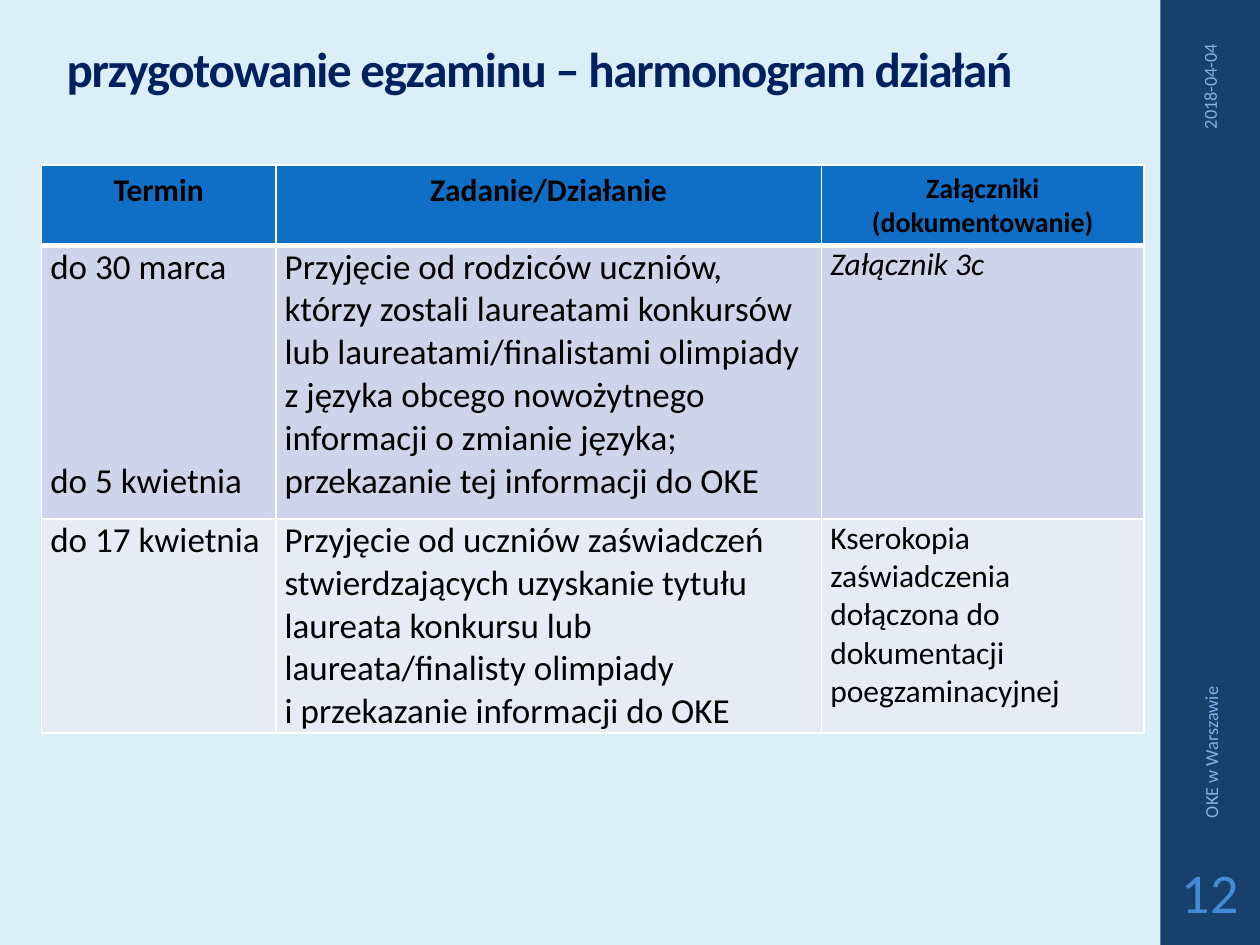
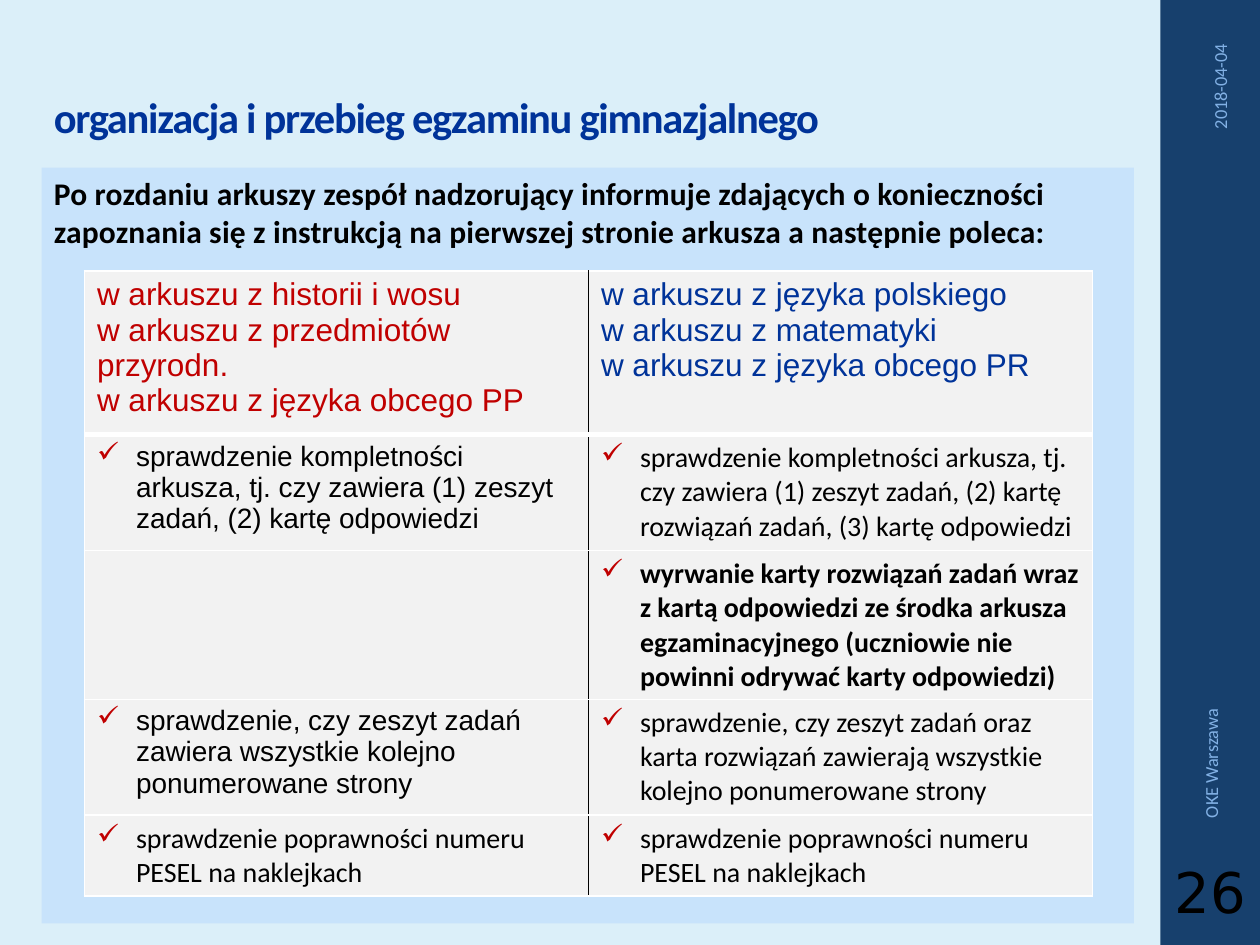
from dataclasses import dataclass, replace

from lxml import etree
from pptx import Presentation
from pptx.dml.color import RGBColor
from pptx.enum.shapes import MSO_SHAPE
from pptx.enum.text import MSO_ANCHOR, PP_ALIGN
from pptx.oxml.ns import qn
from pptx.util import Emu, Pt

RECT = MSO_SHAPE.RECTANGLE
TOP, MIDDLE, BOTTOM = MSO_ANCHOR.TOP, MSO_ANCHOR.MIDDLE, MSO_ANCHOR.BOTTOM
LEFT, CENTER, RIGHT = PP_ALIGN.LEFT, PP_ALIGN.CENTER, PP_ALIGN.RIGHT

EMU_PER_PX = 9144  # 100 px to the inch
SLIDE_W, SLIDE_H = 1000, 750
BAND_X = 921

BACKGROUND, BAND = "DBEFF9", "17406D"
FOOTER, PAGE_BLUE = "82B1E5", "448AD7"
NAVY, BLUE, RED = "002060", "003399", "C00000"
BLACK, WHITE = "000000", "FFFFFF"
HEADER_FILL, ROW_DARK, ROW_LIGHT = "0F6FC6", "CCD5EA", "E7EBF5"
PANEL, GREY = "C8E3FB", "F2F2F2"


@dataclass(frozen=True)
class Box:
    x: int
    y: int
    w: int
    h: int


@dataclass(frozen=True)
class Style:
    size: float
    color: str = BLACK
    font: str = "Calibri"
    bold: bool = False
    italic: bool = False
    tracking: int = 0  # hundredths of a point
    align: int = LEFT
    line_spacing: float = 1.0


@dataclass(frozen=True)
class Cell:
    text: str
    style: Style
    fill: str
    bullet: bool = False
    gap: int = 0  # points before each later paragraph
    margin_x: int = 10
    margin_y: int = 5


@dataclass(frozen=True)
class Footer:
    date_x: int
    office: str
    page: str
    page_style: Style


TITLE = Style(28, NAVY, bold=True, tracking=-70, line_spacing=0.9)
SMALL = Style(10.5, FOOTER)
PAGE = Style(32, PAGE_BLUE, align=CENTER)


def px(n: int) -> Emu:
    return Emu(n * EMU_PER_PX)


def rgb(color: str) -> RGBColor:
    return RGBColor.from_string(color)


def place(box: Box) -> tuple[Emu, ...]:
    return px(box.x), px(box.y), px(box.w), px(box.h)


def write(tf, text: str, style: Style, gap: int = 0) -> None:
    """Fill a text frame with one paragraph per line of text."""
    tf.word_wrap = True
    tf.text = text
    for i, p in enumerate(tf.paragraphs):
        p.alignment = style.align
        p.line_spacing = style.line_spacing
        if gap and i:
            p.space_before = Pt(gap)
        for r in p.runs:
            r.font.size = Pt(style.size)
            r.font.name = style.font
            r.font.bold = style.bold
            r.font.italic = style.italic
            r.font.color.rgb = rgb(style.color)
            if style.tracking:
                r._r.get_or_add_rPr().set("spc", str(style.tracking))


def add_text(slide, box: Box, text: str, style: Style, anchor=MIDDLE,
             rotation: int = 0, margin_x: int = 10) -> None:
    sp = slide.shapes.add_textbox(*place(box))
    sp.rotation = rotation
    tf = sp.text_frame
    tf.margin_left = tf.margin_right = px(margin_x)
    tf.vertical_anchor = anchor
    write(tf, text, style)


def add_rect(slide, box: Box, fill: str):
    sp = slide.shapes.add_shape(RECT, *place(box))
    sp.shadow.inherit = False
    sp.fill.solid()
    sp.fill.fore_color.rgb = rgb(fill)
    sp.line.fill.background()
    return sp


def add_check(p) -> None:
    """Give a paragraph a red tick and a hanging indent."""
    pPr = p._p.get_or_add_pPr()
    pPr.set("marL", str(px(31)))
    pPr.set("indent", str(px(-31)))
    color = etree.SubElement(pPr, qn("a:buClr"))
    etree.SubElement(color, qn("a:srgbClr"), val=RED)
    etree.SubElement(pPr, qn("a:buChar"), char="✓")


def add_border(cell, side: str, color: str, width: int) -> None:
    ln = etree.SubElement(cell._tc.get_or_add_tcPr(), qn(f"a:ln{side}"),
                          w=str(Pt(width)))
    fill = etree.SubElement(ln, qn("a:solidFill"))
    etree.SubElement(fill, qn("a:srgbClr"), val=color)


def add_table(slide, x: int, y: int, widths: list[int], heights: list[int],
              rows: list[list[Cell]], divider: str) -> None:
    """Draw a table with white rules, a thick one under the header, and
    inner vertical rules in the divider colour."""
    box = Box(x, y, sum(widths), sum(heights))
    table = slide.shapes.add_table(len(rows), len(widths), *place(box)).table
    table.first_row = table.horz_banding = False
    for column, width in zip(table.columns, widths):
        column.width = px(width)
    for i, (row, height) in enumerate(zip(rows, heights)):
        table.rows[i].height = px(height)
        for j, item in enumerate(row):
            cell = table.cell(i, j)
            cell.margin_left = cell.margin_right = px(item.margin_x)
            cell.margin_top = cell.margin_bottom = px(item.margin_y)
            cell.vertical_anchor = TOP
            write(cell.text_frame, item.text, item.style, item.gap)
            if item.bullet:
                add_check(cell.text_frame.paragraphs[0])
            add_border(cell, "L", divider if j else WHITE, 1)
            add_border(cell, "R", divider if j < len(row) - 1 else WHITE, 1)
            add_border(cell, "T", WHITE, 3 if i == 1 else 1)
            add_border(cell, "B", WHITE, 3 if i == 0 else 1)
            cell.fill.solid()
            cell.fill.fore_color.rgb = rgb(item.fill)


def add_slide(prs, title: str, title_box: Box, title_style: Style,
              footer: Footer):
    """Add a slide with its background, side band, title and footers."""
    slide = prs.slides.add_slide(prs.slide_layouts[6])
    slide.background.fill.solid()
    slide.background.fill.fore_color.rgb = rgb(BACKGROUND)
    add_rect(slide, Box(BAND_X, 0, SLIDE_W - BAND_X, SLIDE_H), BAND)
    add_text(slide, title_box, title, title_style, BOTTOM)
    add_text(slide, Box(footer.date_x, 114, 208, 30), "2018-04-04",
             replace(SMALL, align=RIGHT), rotation=270)
    add_text(slide, Box(765, 448, 392, 30), footer.office, SMALL,
             rotation=270)
    add_text(slide, Box(923, 675, 75, 65), footer.page, footer.page_style,
             margin_x=3)
    return slide


def build_schedule(prs) -> None:
    slide = add_slide(prs, "przygotowanie egzaminu – harmonogram działań",
                      Box(43, 25, 807, 58), TITLE,
                      Footer(856, "OKE w Warszawie", "12", PAGE))
    head = Style(18, bold=True, align=CENTER)
    body, note = Style(20), Style(18)

    def entry(text: str, style: Style, fill: str, gap: int = 0) -> Cell:
        return Cell(text, style, fill, gap=gap, margin_x=7, margin_y=0)

    rows = [
        [Cell("Termin", head, HEADER_FILL),
         Cell("Zadanie/Działanie", head, HEADER_FILL),
         Cell("Załączniki\n(dokumentowanie)", replace(head, size=16),
              HEADER_FILL)],
        [entry("do 30 marca\ndo 5 kwietnia", body, ROW_DARK, gap=98),
         entry("Przyjęcie od rodziców uczniów, którzy zostali laureatami "
               "konkursów lub laureatami/finalistami olimpiady z języka "
               "obcego nowożytnego informacji o zmianie języka;\n"
               "przekazanie tej informacji do OKE", body, ROW_DARK),
         entry("Załącznik 3c", replace(note, italic=True), ROW_DARK)],
        [entry("do 17 kwietnia", body, ROW_LIGHT),
         entry("Przyjęcie od uczniów zaświadczeń stwierdzających uzyskanie "
               "tytułu laureata konkursu lub laureata/finalisty olimpiady\n"
               "i przekazanie informacji do OKE", body, ROW_LIGHT),
         entry("Kserokopia zaświadczenia dołączona do dokumentacji "
               "poegzaminacyjnej", note, ROW_LIGHT)],
    ]
    add_table(slide, 33, 131, [186, 433, 256], [64, 217, 170], rows, WHITE)


def build_instructions(prs) -> None:
    slide = add_slide(prs, "organizacja i przebieg egzaminu gimnazjalnego",
                      Box(33, 25, 867, 93),
                      replace(TITLE, size=24.3, color=BLUE),
                      Footer(864, "OKE Warszawa", "26",
                             replace(PAGE, color=BLACK, font="DejaVu Sans")))
    panel = add_rect(slide, Box(33, 133, 867, 600), PANEL)
    panel.text_frame.vertical_anchor = TOP
    write(panel.text_frame,
          "Po rozdaniu arkuszy zespół nadzorujący informuje zdających "
          "o konieczności zapoznania się z instrukcją na pierwszej stronie "
          "arkusza a następnie poleca:", Style(18, bold=True, tracking=10))

    head = Style(18, RED, "Arial")
    body = Style(16)
    arial = replace(body, font="Arial")

    def check(text: str, style: Style = body) -> Cell:
        return Cell(text, style, GREY, bullet=True)

    pesel = check("sprawdzenie poprawności numeru PESEL na naklejkach")
    rows = [
        [Cell("w arkuszu z historii i wosu\n"
              "w arkuszu z przedmiotów przyrodn.\n"
              "w arkuszu z języka obcego PP", head, GREY),
         Cell("w arkuszu z języka polskiego\nw arkuszu z matematyki\n"
              "w arkuszu z języka obcego PR", replace(head, color=BLUE),
              GREY)],
        [check("sprawdzenie kompletności arkusza, tj. czy zawiera (1) zeszyt "
               "zadań, (2) kartę odpowiedzi", arial),
         check("sprawdzenie kompletności arkusza, tj. czy zawiera (1) zeszyt "
               "zadań, (2) kartę rozwiązań zadań, (3) kartę odpowiedzi")],
        [Cell("", body, GREY),
         check("wyrwanie karty rozwiązań zadań wraz z kartą odpowiedzi ze "
               "środka arkusza egzaminacyjnego (uczniowie nie powinni "
               "odrywać karty odpowiedzi)", replace(body, bold=True))],
        [check("sprawdzenie, czy zeszyt zadań zawiera wszystkie kolejno "
               "ponumerowane strony", arial),
         check("sprawdzenie, czy zeszyt zadań oraz karta rozwiązań zawierają "
               "wszystkie kolejno ponumerowane strony")],
        [pesel, pesel],
    ]
    add_table(slide, 67, 215, [400, 400], [122, 92, 118, 92, 64], rows, BLACK)


def main() -> None:
    prs = Presentation()
    prs.slide_width, prs.slide_height = px(SLIDE_W), px(SLIDE_H)
    build_schedule(prs)
    build_instructions(prs)
    prs.save("out.pptx")


if __name__ == "__main__":
    main()
